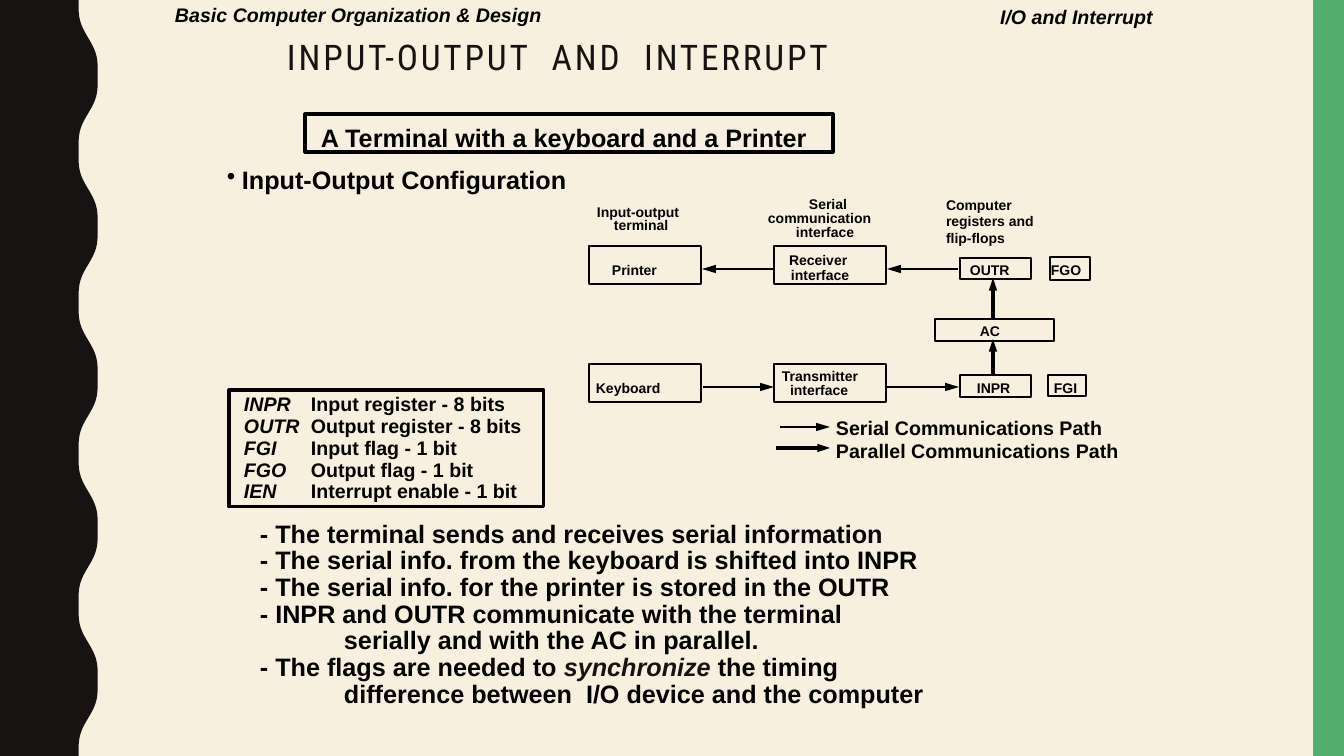
from dataclasses import dataclass
from math import cos, pi

from lxml.etree import SubElement
from pptx import Presentation
from pptx.dml.color import RGBColor as Rgb
from pptx.enum.shapes import MSO_CONNECTOR as Conn, MSO_SHAPE as Kind
from pptx.enum.text import MSO_ANCHOR as Anchor, MSO_AUTO_SIZE as Fit, PP_ALIGN as Align
from pptx.oxml.ns import qn
from pptx.util import Emu, Pt

SCALE = 914400 / 100.8
WIDE, HIGH = 1344, 756


@dataclass(frozen=True)
class Theme:
    paper: str = "F7F0DF"
    ink: str = "171312"
    black: str = "000000"
    green: str = "53AE6E"
    face: str = "Arial"
    head: str = "Roboto Condensed"
    title: float = 25.2
    large: int = 18
    mid: int = 14
    small: int = 10


THEME = Theme()

TERMS = [
    ("INPR", "Input register - 8 bits"),
    ("OUTR", "Output register - 8 bits"),
    ("FGI", "Input flag - 1 bit"),
    ("FGO", "Output flag - 1 bit"),
    ("IEN", "Interrupt enable - 1 bit"),
]
NOTES = [
    (0, ["- The terminal sends and receives serial information"]),
    (0, ["- The serial info. from the keyboard is shifted into INPR"]),
    (0, ["- The serial info. for the printer is stored in the OUTR"]),
    (0, ["- INPR and OUTR communicate with the terminal"]),
    (84, ["serially and with the AC in parallel."]),
    (0, ["- The flags are needed to ", "synchronize", " the timing"]),
    (84, ["difference between  I/O device and the computer"]),
]
LABELS = [
    ("Input-output", 587, 199, 114), ("terminal", 604, 212, 85),
    ("Serial", 799, 191, 70), ("communication", 758, 205, 134), ("interface", 786, 219, 89),
    ("Printer", 602, 257, 76), ("Keyboard", 586, 375, 95),
    ("Receiver", 779, 247, 89), ("interface", 781, 262, 89),
    ("Transmitter", 772, 363, 108), ("interface", 780, 377, 89),
    ("OUTR", 960, 257, 70), ("FGO", 1041, 257, 62), ("AC", 970, 318, 52),
    ("INPR", 967, 375, 65), ("FGI", 1044, 375, 55),
]
CELLS = [(x, y, 112, 38) for x in (589, 774) for y in (246, 364)] + [
    (960, 258, 71, 21), (1050, 257, 40, 23), (935, 319, 119, 22),
    (960, 375, 71, 22), (1048, 375, 38, 21),
]
SERIAL = [
    (958, 269, 887, 269), (773, 269, 702, 269), (703, 387, 774, 387),
    (887, 387, 959, 387), (780, 427, 830, 427),
]
BUSES = [(993, 319, 993, 278), (993, 374, 993, 339), (776, 448, 830, 448)]


def px(num):
    return Emu(round(num * SCALE))


def tint(name):
    return Rgb.from_string(name)


def add_run(para, text, size, ital=False, color=THEME.black, face=THEME.face, bold=True):
    run = para.add_run()
    run.text = text
    font = run.font
    font.name, font.size = face, Pt(size)
    font.bold, font.italic = bold, ital
    font.color.rgb = tint(color)
    return run


def set_para(para, space=1.0, left=0, first=0, mark=None, align=Align.LEFT):
    para.alignment = align
    para.line_spacing = space
    para.space_before = para.space_after = Pt(0)
    props = para._p.get_or_add_pPr()
    props.set("marL", str(px(left)))
    props.set("indent", str(px(first)))
    if mark:
        SubElement(props, qn("a:buChar")).set("char", mark)
    else:
        SubElement(props, qn("a:buNone"))


def set_frame(shape, pad=(10, 5)):
    frame = shape.text_frame
    frame.word_wrap, frame.auto_size = True, Fit.NONE
    frame.margin_left = frame.margin_right = px(pad[0])
    frame.margin_top = frame.margin_bottom = px(pad[1])
    return frame


def place(shape, *box):
    shape.left, shape.top, shape.width, shape.height = map(px, box)


def next_para(frame, num):
    return frame.add_paragraph() if num else frame.paragraphs[0]


def add_text(slide, lines, box, size, ital=False, pad=(10, 5), **form):
    frame = set_frame(slide.shapes.add_textbox(*map(px, box)), pad)
    for num, line in enumerate(lines):
        para = next_para(frame, num)
        set_para(para, **form)
        add_run(para, line, size, ital)


def paint(shape, color):
    shape.shadow.inherit = False
    shape.fill.solid()
    shape.fill.fore_color.rgb = tint(color)
    shape.line.fill.background()


def add_box(slide, box, width):
    shape = slide.shapes.add_shape(Kind.RECTANGLE, *map(px, box))
    shape.shadow.inherit = False
    shape.fill.background()
    shape.line.color.rgb = tint(THEME.black)
    shape.line.width = Pt(width)


def add_arrow(slide, ends, width, wing, size):
    line = slide.shapes.add_connector(Conn.STRAIGHT, *map(px, ends))
    line.line.color.rgb = tint(THEME.black)
    line.line.width = Pt(width)
    tip = SubElement(line.line._get_or_add_ln(), qn("a:tailEnd"))
    for key, val in (("type", "triangle"), ("w", wing), ("len", size)):
        tip.set(key, val)
    SubElement(line._element.spPr, qn("a:effectLst"))


def add_wave(slide):
    step = 10 * pi / HIGH
    edge = [(px(88.2 - 10.8 * cos(y * step) + 1.2 * cos(3 * y * step)), px(y))
            for y in range(0, HIGH + 1, 4)]
    form = slide.shapes.build_freeform(0, 0)
    form.add_line_segments(edge + [(0, px(HIGH))], close=True)
    paint(form.convert_to_shape(), THEME.ink)


def add_title(slide):
    shape = slide.shapes.title
    place(shape, 277, 36, 796, 46)
    frame = set_frame(shape)
    frame.vertical_anchor = Anchor.MIDDLE
    para = frame.paragraphs[0]
    set_para(para, 0.87)
    run = add_run(para, "INPUT-OUTPUT  AND  INTERRUPT", THEME.title,
                  color=THEME.ink, face=THEME.head, bold=False)
    run.font._element.set("spc", "200")


def add_notes(slide):
    shape = slide.placeholders[1]
    place(shape, 253, 519, 685, 194)
    frame = set_frame(shape, (7, 3))
    for num, (left, parts) in enumerate(NOTES):
        para = next_para(frame, num)
        set_para(para, 0.88, left)
        for part in parts:
            ital = part == "synchronize"
            add_run(para, part, THEME.large, ital, THEME.ink if ital else THEME.black)


def add_terms(slide):
    shape = slide.shapes.add_textbox(*map(px, (237, 391, 428, 116)))
    frame = set_frame(shape, (7, 3))
    for num, (term, text) in enumerate(TERMS):
        para = next_para(frame, num)
        set_para(para, 0.93, 67, -67, align=Align.JUSTIFY)
        add_run(para, term, THEME.mid, True)
        add_run(para, "\t" + text, THEME.mid)


def main():
    deck = Presentation()
    deck.slide_width, deck.slide_height = px(WIDE), px(HIGH)
    slide = deck.slides.add_slide(deck.slide_layouts[1])
    slide.background.fill.solid()
    slide.background.fill.fore_color.rgb = tint(THEME.paper)
    add_wave(slide)
    paint(slide.shapes.add_shape(Kind.RECTANGLE, *map(px, (1313, 0, 31, HIGH))), THEME.green)
    add_title(slide)
    add_text(slide, ["Basic Computer Organization & Design"], (168, 0, 393, 29),
             THEME.mid, True, (7, 3))
    add_text(slide, ["I/O and Interrupt"], (980, 0, 183, 33), THEME.mid, True, align=Align.RIGHT)
    add_text(slide, ["A Terminal with a keyboard and a Printer"], (311, 117, 521, 40), THEME.large)
    add_text(slide, ["Input-Output Configuration"], (220, 166, 365, 31), THEME.large,
             pad=(7, 3), space=0.85, left=15, first=-15, mark="•")
    add_terms(slide)
    add_notes(slide)
    for box in ((305, 114, 528, 38), (229, 390, 315, 117)):
        add_box(slide, box, 2.25)
    for box in CELLS:
        add_box(slide, box, 1)
    for text, x, y, wide in LABELS:
        add_text(slide, [text], (x, y, wide, 27), THEME.small)
    add_text(slide, ["Computer", "registers and", "flip-flops"], (936, 191, 119, 78), THEME.small)
    for ends in SERIAL:
        add_arrow(slide, ends, 1, "med", "lg")
    for ends in BUSES:
        add_arrow(slide, ends, 3, "sm", "med")
    for text, y, wide in (("Serial Communications Path", 411, 298),
                          ("Parallel Communications Path", 434, 314)):
        add_text(slide, [text], (826, y, wide, 33), THEME.mid)
    deck.save("out.pptx")


if __name__ == "__main__":
    main()
